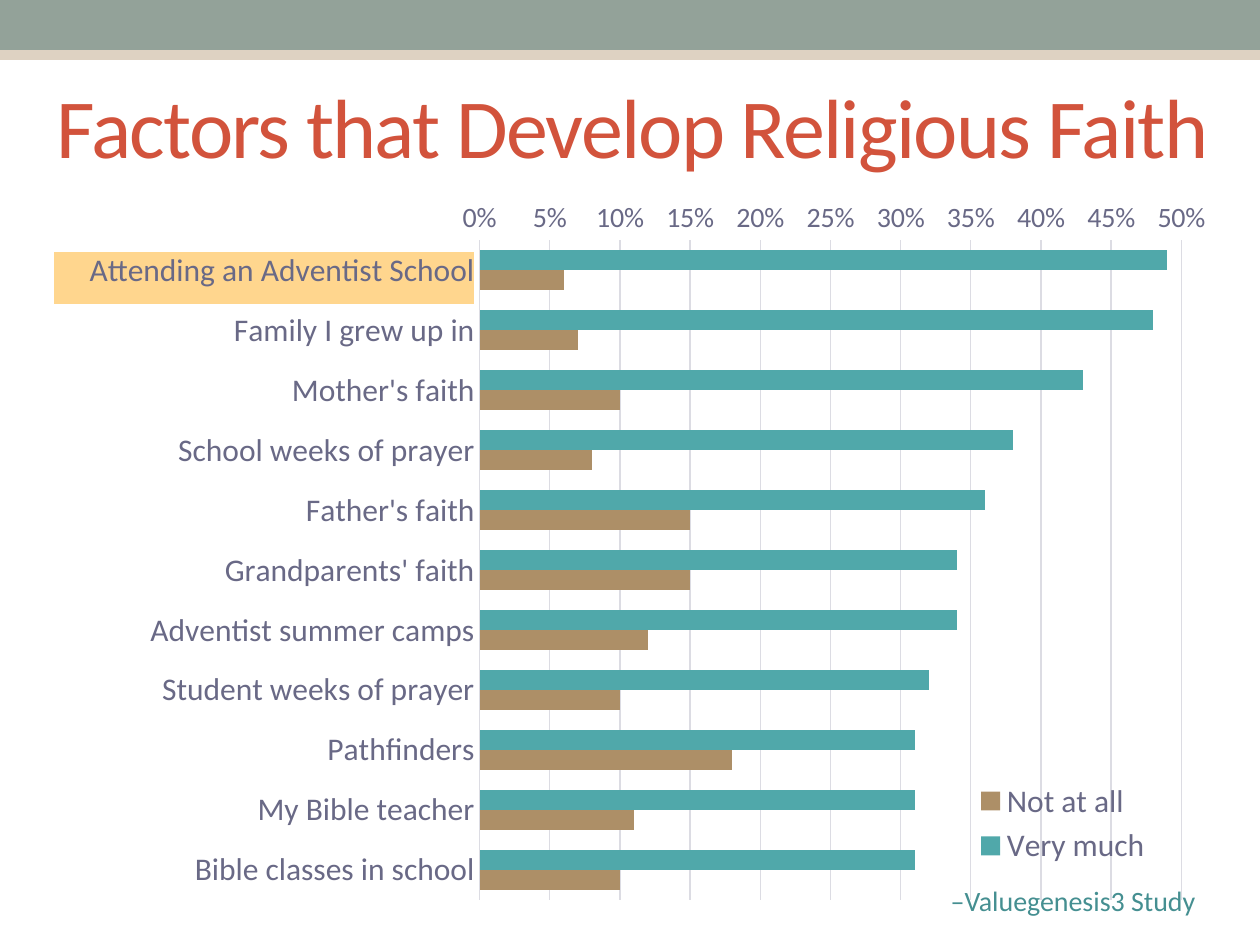
import pptx
import pptx.chart.data
import pptx.dml.color
import pptx.enum.chart
import pptx.enum.shapes
import pptx.enum.text
import pptx.oxml
import pptx.util

FONT = "Calibri"
AXIS_TEXT, GRID = "696986", "DCDCE3"
TITLE = "Factors that Develop Religious Faith"
CREDIT = "–Valuegenesis3 Study"

# factor, very much, not at all
FACTORS = [
    ("Attending an Adventist School", 0.49, 0.06),
    ("Family I grew up in", 0.48, 0.07),
    ("Mother's faith", 0.43, 0.10),
    ("School weeks of prayer", 0.38, 0.08),
    ("Father's faith", 0.36, 0.15),
    ("Grandparents' faith", 0.34, 0.15),
    ("Adventist summer camps", 0.34, 0.12),
    ("Student weeks of prayer", 0.32, 0.10),
    ("Pathfinders", 0.31, 0.18),
    ("My Bible teacher", 0.31, 0.11),
    ("Bible classes in school", 0.31, 0.10),
]
ANSWERS = [("Very much", "50A8AA"), ("Not at all", "AD8F67")]

# box in px, fill, outline
BANDS = [
    ((0, 10, 1260, 50), "DED2C2", None),
    ((0, 0, 1260, 50), "93A299", None),
    ((52, 250, 424, 56), "FFD68E", "FFFFFF"),
]
TITLE_BOX = (30, 73, 1205, 103)
CHART_BOX = (52, 176, 1162, 740)
CREDIT_BOX = (935, 877, 273, 47)
PLOT_LAYOUT = {"layoutTarget": "inner", "xMode": "edge", "yMode": "edge",
               "x": 0.368, "y": 0.087, "w": 0.604, "h": 0.891}
LEGEND_LAYOUT = {"xMode": "edge", "yMode": "edge",
                 "x": 0.79, "y": 0.81, "w": 0.16, "h": 0.13}


def px(*lengths):
    return [pptx.util.Emu(round(n * 914400 / 126)) for n in lengths]


def rgb(code):
    return pptx.dml.color.RGBColor.from_string(code)


def paint(fill, code):
    fill.solid()
    fill.fore_color.rgb = rgb(code)


def assign(target, **values):
    for name, value in values.items():
        setattr(target, name, value)


def set_font(font, size, color):
    assign(font, name=FONT, size=pptx.util.Pt(size))
    font.color.rgb = rgb(color)


def draw_line(line, color, width=0.75):
    line.color.rgb = rgb(color)
    line.width = pptx.util.Pt(width)


def manual_layout(values):
    ns = "http://schemas.openxmlformats.org/drawingml/2006/chart"
    parts = "".join(f'<c:{k} val="{v}"/>' for k, v in values.items())
    return pptx.oxml.parse_xml(
        f'<c:layout xmlns:c="{ns}"><c:manualLayout>{parts}</c:manualLayout></c:layout>')


def add_band(slide, box, fill, outline):
    band = slide.shapes.add_shape(pptx.enum.shapes.MSO_SHAPE.RECTANGLE, *px(*box))
    band.shadow.inherit = False
    paint(band.fill, fill)
    if outline:
        draw_line(band.line, outline, 2.08)
    else:
        band.line.fill.background()


def add_text(slide, box, text, size, color, align, wrap):
    frame = slide.shapes.add_textbox(*px(*box)).text_frame
    assign(frame, word_wrap=wrap,
           vertical_anchor=pptx.enum.text.MSO_ANCHOR.MIDDLE)
    paragraph = frame.paragraphs[0]
    paragraph.alignment = align
    run = paragraph.add_run()
    run.text = text
    set_font(run.font, size, color)
    return run


def add_factor_chart(slide):
    enums = pptx.enum.chart
    factors, *shares = zip(*FACTORS)
    data = pptx.chart.data.CategoryChartData(number_format="0%")
    data.categories = factors
    for (answer, _), values in zip(ANSWERS, shares):
        data.add_series(answer, values)
    chart = slide.shapes.add_chart(
        enums.XL_CHART_TYPE.BAR_CLUSTERED, *px(*CHART_BOX), data).chart
    assign(chart, has_title=False, has_legend=True)
    set_font(chart.font, 10, "292934")

    plot = chart.plots[0]
    assign(plot, gap_width=100, overlap=0, vary_by_categories=False)
    for series, (_, color) in zip(plot.series, ANSWERS):
        paint(series.format.fill, color)
        series.invert_if_negative = False

    no_tick = enums.XL_TICK_MARK.NONE
    for axis, size in ((chart.category_axis, 18), (chart.value_axis, 16)):
        assign(axis, major_tick_mark=no_tick, minor_tick_mark=no_tick)
        set_font(axis.tick_labels.font, size, AXIS_TEXT)
    assign(chart.category_axis, reverse_order=True, has_major_gridlines=False)
    draw_line(chart.category_axis.format.line, GRID)
    assign(chart.value_axis, minimum_scale=0, maximum_scale=0.5,
           major_unit=0.05, has_major_gridlines=True)
    assign(chart.value_axis.tick_labels, number_format="0%",
           number_format_is_linked=False)
    draw_line(chart.value_axis.major_gridlines.format.line, GRID)
    chart.value_axis.format.line.fill.background()

    legend = chart.legend
    assign(legend, position=enums.XL_LEGEND_POSITION.BOTTOM, include_in_layout=False)
    set_font(legend.font, 18, AXIS_TEXT)

    root = chart.element
    for old_layout in root.xpath(".//c:plotArea/c:layout | .//c:legend/c:layout"):
        old_layout.getparent().remove(old_layout)
    root.xpath(".//c:plotArea")[0].insert(0, manual_layout(PLOT_LAYOUT))
    root.xpath(".//c:legendPos")[0].addnext(manual_layout(LEGEND_LAYOUT))


def main():
    deck = pptx.Presentation()
    deck.slide_width, deck.slide_height = px(1260, 945)
    slide = deck.slides.add_slide(deck.slide_layouts[6])
    for band in BANDS:
        add_band(slide, *band)
    align = pptx.enum.text.PP_ALIGN
    title = add_text(slide, TITLE_BOX, TITLE, 48, "D2533C", align.CENTER, True)
    title.font._element.set("spc", "-100")
    add_factor_chart(slide)
    add_text(slide, CREDIT_BOX, CREDIT, 16, "458F91", align.RIGHT, False)
    deck.save("out.pptx")


if __name__ == "__main__":
    main()
